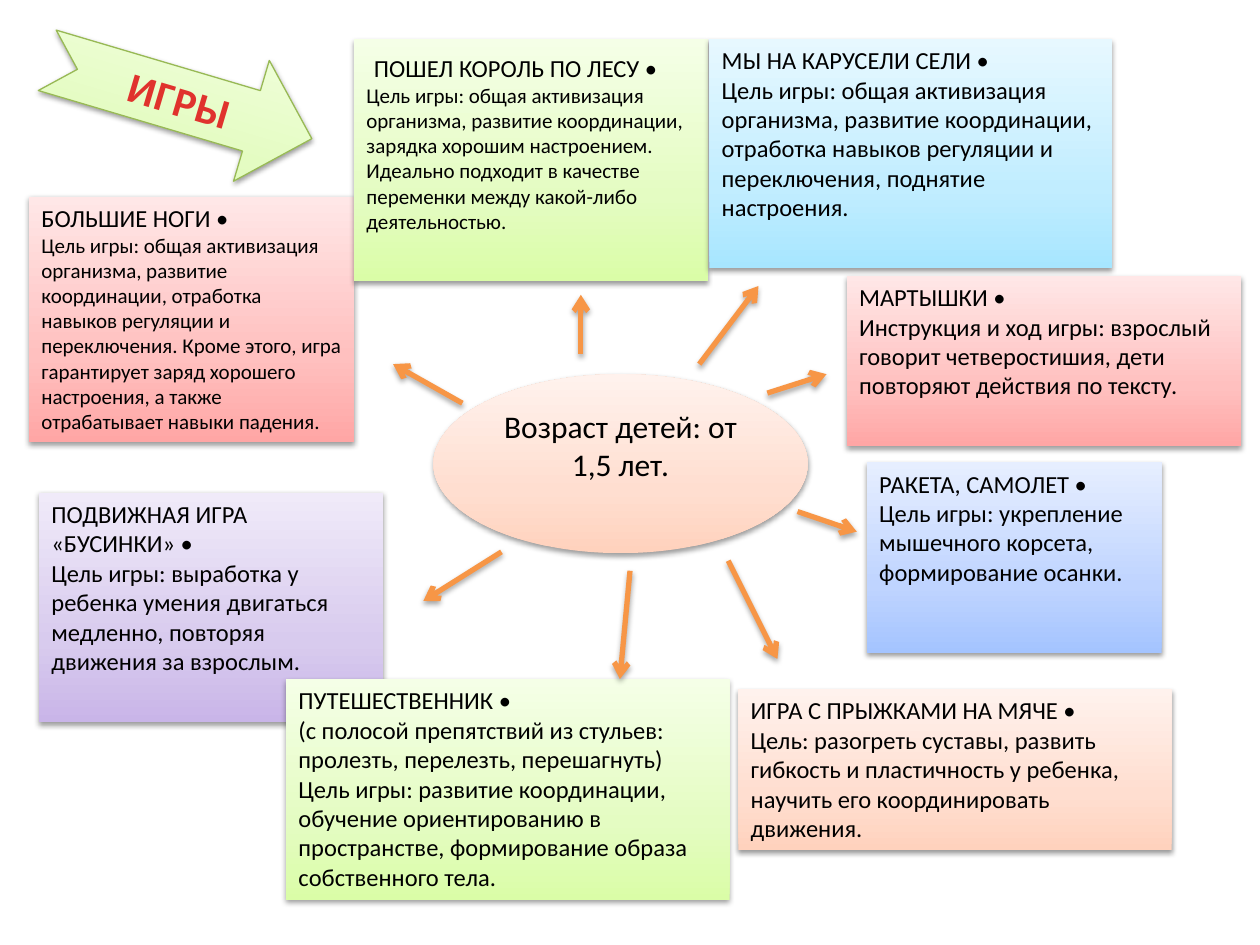
from copy import deepcopy

from lxml import etree
from pptx import Presentation
from pptx.dml.color import RGBColor
from pptx.enum.shapes import MSO_CONNECTOR, MSO_SHAPE
from pptx.enum.text import MSO_ANCHOR, PP_ALIGN
from pptx.oxml.ns import qn
from pptx.util import Inches, Pt

RECTANGLE = MSO_SHAPE.RECTANGLE
ELLIPSE = MSO_SHAPE.OVAL
NOTCHED_ARROW = MSO_SHAPE.NOTCHED_RIGHT_ARROW
STRAIGHT = MSO_CONNECTOR.STRAIGHT
TOP, MIDDLE = MSO_ANCHOR.TOP, MSO_ANCHOR.MIDDLE
LEFT, CENTER = PP_ALIGN.LEFT, PP_ALIGN.CENTER

PEACH = ("FFD2BD", "FFDED0", "FFF2ED")
RED = ("FFA6A5", "FFC0BF", "FFE7E7")
GREEN = ("DAFDA7", "E4FCC2", "F5FFE7")
AQUA = ("A7E6FF", "C1EDFF", "E7F8FF")
PURPLE = ("C9B5E8", "D8CBEE", "F0EAF9")
BLUE = ("A4C4FF", "BFD4FF", "E6EEFF")


def rgb(value):
    return RGBColor.from_string(value)


class GameSlide:
    font_name = "Calibri"
    text_color = "000000"
    arrow_color = "F79646"
    stop_positions = (0, 0.35, 1)

    def __init__(self, slide):
        self.slide = slide

    def shadow(self, properties, opacity, distance):
        effects = properties.find(qn("a:effectLst"))
        if effects is None:
            effects = etree.SubElement(properties, qn("a:effectLst"))
        outer = etree.SubElement(
            effects, qn("a:outerShdw"), blurRad=str(Pt(3.1)),
            dist=str(Pt(distance)), dir="5400000", rotWithShape="0")
        black = etree.SubElement(outer, qn("a:srgbClr"), val="000000")
        etree.SubElement(black, qn("a:alpha"), val=str(opacity * 1000))

    def gradient(self, shape, colors):
        shape.fill.gradient()
        shape.fill.gradient_angle = 90
        stops = shape._element.spPr.find(qn("a:gradFill")).find(qn("a:gsLst"))
        stops.insert(1, deepcopy(stops[0]))
        for stop, position, color in zip(
                shape.fill.gradient_stops, self.stop_positions, colors):
            stop.position = position
            stop.color.rgb = rgb(color)

    def panel(self, kind, place, colors, outline=None):
        shape = self.slide.shapes.add_shape(kind, *map(Inches, place))
        self.gradient(shape, colors)
        if outline:
            shape.line.color.rgb = rgb(outline)
            shape.line.width = Pt(0.75)
        else:
            shape.line.fill.background()
        shape.shadow.inherit = False
        self.shadow(shape._element.spPr, 38, 1.6)
        return shape

    def text(self, shape, lines, size, align=LEFT, anchor=TOP):
        frame = shape.text_frame
        frame.word_wrap = True
        frame.vertical_anchor = anchor
        paragraph = frame.paragraphs[0]
        paragraph.alignment = align
        for number, line in enumerate(lines):
            if number:
                paragraph.add_line_break()
            paragraph.add_run().text = line
        paragraph.font.name = self.font_name
        paragraph.font.size = Pt(size)
        paragraph.font.color.rgb = rgb(self.text_color)
        return paragraph

    def game(self, place, colors, lines, size=14, top_inset=0.05, indent=0):
        card = self.panel(RECTANGLE, place, colors)
        card.text_frame.margin_top = Inches(top_inset)
        paragraph = self.text(card, lines, size)
        if size != 14:
            paragraph.runs[0].font.size = Pt(14)
        if indent:
            paragraph._p.get_or_add_pPr().set("indent", str(Inches(indent)))

    def age(self, place, colors, line):
        oval = self.panel(ELLIPSE, place, colors)
        oval.text_frame.margin_bottom = Inches(0.35)
        self.text(oval, [line], 18, CENTER, MIDDLE)

    def heading(self, place, rotation, colors, outline, line):
        banner = self.panel(NOTCHED_ARROW, place, colors, outline)
        banner.rotation = rotation
        paragraph = self.text(banner, [line], 24, CENTER)
        paragraph.font.bold = True
        run = paragraph.runs[0]
        run.font.fill.gradient()
        run.font.fill.gradient_angle = 270
        for stop, position, color in zip(
                run.font.fill.gradient_stops, (0.25, 1), ("E0322D", "A2201C")):
            stop.position = position
            stop.color.rgb = rgb(color)
        run._r.get_or_add_rPr().set("spc", "50")

    def arrow(self, start, end):
        connector = self.slide.shapes.add_connector(
            STRAIGHT, *map(Inches, start + end))
        connector.line.color.rgb = rgb(self.arrow_color)
        connector.line.width = Pt(3)
        properties = connector._element.spPr
        etree.SubElement(properties.find(qn("a:ln")), qn("a:tailEnd"), type="arrow")
        self.shadow(properties, 35, 1.8)


def main():
    deck = Presentation()
    deck.slide_width, deck.slide_height = Inches(10), Inches(7.5)
    games = GameSlide(deck.slides.add_slide(deck.slide_layouts[6]))

    games.age((3.44, 2.97, 2.97, 1.42), PEACH, "Возраст детей: от 1,5 лет.")

    games.game((0.23, 1.56, 2.58, 1.95), RED, [
        "БОЛЬШИЕ НОГИ •",
        "Цель игры: общая активизация организма, развитие координации, "
        "отработка навыков регуляции и переключения. Кроме этого, игра "
        "гарантирует заряд хорошего настроения, а также отрабатывает "
        "навыки падения."], size=12)
    games.game((2.81, 0.31, 2.81, 1.92), GREEN, [
        "ПОШЕЛ КОРОЛЬ ПО ЛЕСУ •",
        "Цель игры: общая активизация организма, развитие координации, "
        "зарядка хорошим настроением. Идеально подходит в качестве "
        "переменки между какой-либо деятельностью."],
        size=12, top_inset=0.11, indent=0.06)
    games.game((5.63, 0.31, 3.2, 1.82), AQUA, [
        "МЫ НА КАРУСЕЛИ СЕЛИ •",
        "Цель игры: общая активизация организма, развитие координации, "
        "отработка навыков регуляции и переключения, поднятие настроения."])
    games.game((6.72, 2.19, 3.13, 1.35), RED, [
        "МАРТЫШКИ •",
        "Инструкция и ход игры: взрослый говорит четверостишия, дети "
        "повторяют действия по тексту."])
    games.game((0.31, 3.91, 2.73, 1.82), PURPLE, [
        "ПОДВИЖНАЯ ИГРА «БУСИНКИ» •",
        "Цель игры: выработка у ребенка умения двигаться медленно, "
        "повторяя движения за взрослым."])
    games.game((2.27, 5.39, 3.52, 1.75), GREEN, [
        "ПУТЕШЕСТВЕННИК •",
        "(с полосой препятствий из стульев: пролезть, перелезть, перешагнуть)",
        "Цель игры: развитие координации, обучение ориентированию в "
        "пространстве, формирование образа собственного тела."])
    games.game((5.86, 5.47, 3.44, 1.28), PEACH, [
        "ИГРА С ПРЫЖКАМИ НА МЯЧЕ •",
        "Цель: разогреть суставы, развить гибкость и пластичность у "
        "ребенка, научить его координировать движения."])
    games.game((6.88, 3.67, 2.34, 1.51), BLUE, [
        "РАКЕТА, САМОЛЕТ •",
        "Цель игры: укрепление мышечного корсета, формирование осанки."])

    for start, end in (
            ((4.61, 2.81), (4.61, 2.34)),
            ((5.55, 2.89), (6.02, 2.27)),
            ((6.09, 3.12), (6.56, 2.97)),
            ((6.33, 4.06), (6.8, 4.22)),
            ((5.78, 4.45), (6.17, 5.23)),
            ((5, 4.53), (4.92, 5.39)),
            ((3.98, 4.38), (3.36, 4.77)),
            ((3.67, 3.2), (3.12, 2.89))):
        games.arrow(start, end)

    games.heading((0.33, 0.29, 2.19, 1), 16.5, GREEN, "98B955", "ИГРЫ")
    deck.save("out.pptx")


if __name__ == "__main__":
    main()
